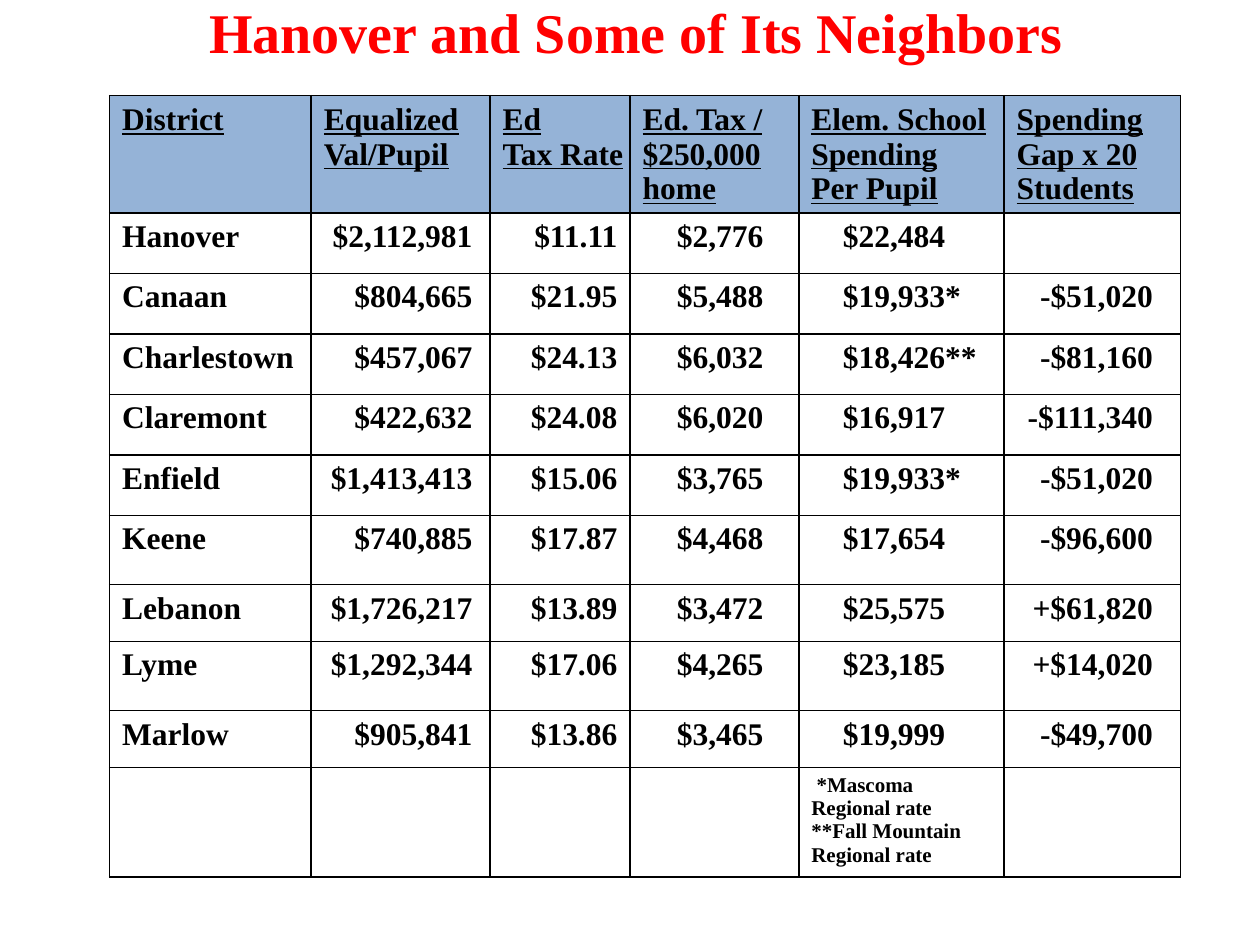
from pptx import Presentation
from pptx.dml.color import RGBColor
from pptx.enum.text import MSO_ANCHOR, PP_ALIGN
from pptx.oxml import parse_xml
from pptx.oxml.ns import nsdecls
from pptx.util import Inches, Pt

WIDTHS = [1.6, 1.42, 1.11, 1.34, 1.63, 1.4]
HEIGHTS = [0.93] + [0.48] * 5 + [0.55, 0.45, 0.55, 0.45, 0.87]
HEADS = ["District", "Equalized Val/Pupil", "Ed\nTax Rate", "Ed. Tax / $250,000 home",
         "Elem. School\nSpending\nPer Pupil", "Spending Gap x 20\nStudents"]
ROWS = [
    ["Hanover", "$2,112,981", "$11.11", "$2,776", "$22,484", ""],
    ["Canaan", "$804,665", "$21.95", "$5,488", "$19,933*", "-$51,020"],
    ["Charlestown", "$457,067", "$24.13", "$6,032", "$18,426**", "-$81,160"],
    ["Claremont", "$422,632", "$24.08", "$6,020", "$16,917", "-$111,340"],
    ["Enfield", "$1,413,413", "$15.06", "$3,765", "$19,933*", "-$51,020"],
    ["Keene", "$740,885", "$17.87", "$4,468", "$17,654", "-$96,600"],
    ["Lebanon", "$1,726,217", "$13.89", "$3,472", "$25,575", "+$61,820"],
    ["Lyme", "$1,292,344", "$17.06", "$4,265", "$23,185", "+$14,020"],
    ["Marlow", "$905,841", "$13.86", "$3,465", "$19,999", "-$49,700"],
]
NOTES = ["", "", "", "", " *Mascoma\vRegional rate\n**Fall Mountain Regional rate", ""]
LEFT, RIGHT = PP_ALIGN.LEFT, PP_ALIGN.RIGHT
LAYOUT = [(LEFT, 0.1), (RIGHT, 0.14), (RIGHT, 0.1), (RIGHT, 0.28), (LEFT, 0.35), (RIGHT, 0.22)]


def style(frame, size, color, align, under=False):
    for para in frame.paragraphs:
        para.alignment = align
        font = para.font
        font.name, font.size, font.bold = "Times New Roman", Pt(size), True
        font.underline = under
        font.color.rgb = RGBColor.from_string(color)


def border(cell):
    props = cell._tc.get_or_add_tcPr()
    for side in ("lnL", "lnR", "lnT", "lnB"):
        props.append(parse_xml(
            f'<a:{side} {nsdecls("a")} w="12700"><a:solidFill>'
            f'<a:srgbClr val="000000"/></a:solidFill></a:{side}>'))


def fill_cell(cell, text, size=18, align=LEFT, pad=0.1, color=None):
    cell.text = text
    cell.margin_left = Inches(pad if align == LEFT else 0.05)
    cell.margin_right = Inches(pad if align == RIGHT else 0.05)
    border(cell)
    if color:
        cell.fill.solid()
        cell.fill.fore_color.rgb = RGBColor.from_string(color)
    else:
        cell.fill.background()
    style(cell.text_frame, size, "000000", align, under=bool(color))


def add_title(slide, left, top, width, height):
    title = slide.shapes.title
    title.left, title.top = Inches(left), Inches(top)
    title.width, title.height = Inches(width), Inches(height)
    frame = title.text_frame
    frame.text = "Hanover and Some of Its Neighbors"
    frame.vertical_anchor = MSO_ANCHOR.MIDDLE
    style(frame, 32, "FF0000", PP_ALIGN.CENTER)


def add_grid(slide, left, top):
    table = slide.shapes.add_table(
        len(HEIGHTS), len(WIDTHS), Inches(left), Inches(top),
        Inches(sum(WIDTHS)), Inches(sum(HEIGHTS))).table
    table.first_row = table.horz_banding = False
    for col, width in zip(table.columns, WIDTHS):
        col.width = Inches(width)
    for row, height in zip(table.rows, HEIGHTS):
        row.height = Inches(height)
    for c, (align, pad) in enumerate(LAYOUT):
        fill_cell(table.cell(0, c), HEADS[c], color="95B3D7")
        for r, row in enumerate(ROWS, 1):
            fill_cell(table.cell(r, c), row[c], align=align, pad=pad)
        fill_cell(table.cell(len(ROWS) + 1, c), NOTES[c], size=12)


def main():
    deck = Presentation()
    deck.slide_width, deck.slide_height = Inches(10), Inches(7.5)
    slide = deck.slides.add_slide(deck.slide_layouts[5])
    add_title(slide, 0.8, 0, 8.5, 0.5)
    add_grid(slide, 0.87, 0.76)
    deck.save("out.pptx")


if __name__ == "__main__":
    main()
